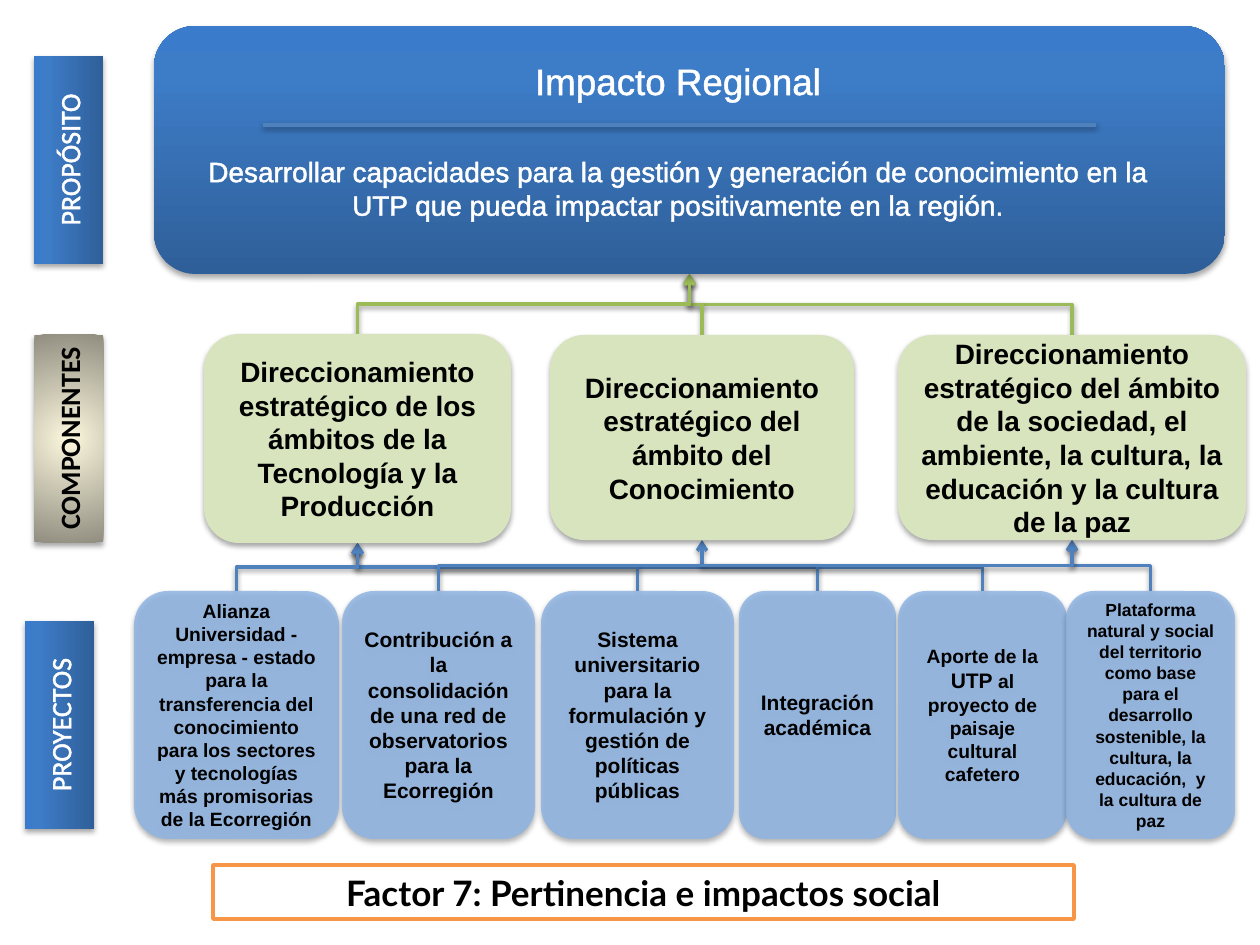
from pptx import Presentation
from pptx.dml.color import RGBColor
from pptx.enum.shapes import MSO_CONNECTOR as Link, MSO_SHAPE as Shape
from pptx.enum.text import MSO_ANCHOR as Anchor, MSO_AUTO_SIZE as AutoSize, PP_ALIGN as Align
from pptx.oxml import parse_xml
from pptx.oxml.ns import nsdecls, qn
from pptx.util import Emu, Pt

PX = 914400 / 126
COLORS = {
    "white": "FFFFFF", "black": "000000", "blue": "4F81BD", "green": "9BBB59",
    "orange": "F79646", "component": "D7E4BD", "project": "8EB4E3",
}
BLUE_STOPS = [(0, "2F5F99"), (80, "3D7CC7"), (100, "3A7CCB")]
SAND_STOPS = [(0, "FCF7DD"), (100, "918E81")]
UPWARD = '<a:lin ang="16200000" scaled="0"/>'
RADIAL = '<a:path path="circle"><a:fillToRect l="50000" t="50000" r="50000" b="50000"/></a:path>'

LABELS = [
    ("PROPÓSITO", -35, 125, BLUE_STOPS, UPWARD, {"color": "white", "outline": True}),
    ("COMPONENTES", -35, 404, SAND_STOPS, RADIAL, {"bold": True}),
    ("PROYECTOS", -44, 690, BLUE_STOPS, UPWARD, {"color": "white", "outline": True}),
]
COMPONENTS = [
    ("Direccionamiento estratégico de los ámbitos de la Tecnología y la Producción",
     (204, 334, 307, 209)),
    ("Direccionamiento estratégico del ámbito del Conocimiento", (550, 335, 304, 205)),
    ("Direccionamiento estratégico del ámbito de la sociedad, el ambiente, la cultura, "
     "la educación y la cultura de la paz", (898, 335, 348, 205)),
]
PROJECTS = [
    ([("Alianza Universidad - empresa - estado para la transferencia del conocimiento para "
       "los sectores y tecnologías más promisorias de la Ecorregión", 11)], 134, 205, 0),
    ([("Contribución a la consolidación de una red de observatorios para la Ecorregión", 12)],
     342, 193, 2),
    ([("Sistema universitario para la formulación y gestión de políticas públicas", 12)],
     541, 193, 0),
    ([("Integración académica", 12)], 739, 157, 1),
    ([("Aporte de la ", 11), ("UTP", 12), (" al proyecto de paisaje cultural cafetero", 11)],
     898, 169, 0),
    ([("Plataforma natural y social del territorio como base para el desarrollo sostenible, "
       "la cultura, la educación,  y la cultura de paz", 10)], 1066, 169, 2),
]


def px(*values):
    """Turn pixel lengths into a list of EMU lengths."""
    return [Emu(round(value * PX)) for value in values]


def rgb(name):
    """Return the named colour."""
    return RGBColor.from_string(COLORS[name])


def xml(tag, content="", attributes=""):
    """Build one DrawingML element."""
    return parse_xml(f'<a:{tag} {nsdecls("a")} {attributes}>{content}</a:{tag}>')


def shadow(distance, alpha):
    """Build a soft black shadow that falls downwards."""
    return xml("outerShdw", f'<a:srgbClr val="000000"><a:alpha val="{alpha * 1000}"/></a:srgbClr>',
               f'blurRad="40000" dist="{distance}" dir="5400000" rotWithShape="0"')


def add_span(para, text, size=16, font="Arial", color="black", bold=False, outline=False):
    """Add formatted text to a centred paragraph."""
    para.alignment = Align.CENTER
    span = para.add_run()
    span.text = text
    span.font.size, span.font.name, span.font.bold = Pt(size), font, bold
    span.font.color.rgb = rgb(color)
    if outline:
        line = f'<a:solidFill><a:srgbClr val="{COLORS[color]}"/></a:solidFill>'
        span.font.fill.solid()
        span.font.color.rgb = rgb(color)
        para.runs[-1].font._element.insert(0, xml("ln", line, 'w="18415"'))


def add_box(page, kind, area, shaded=True):
    """Add a shape without a line, with a shadow if wanted."""
    box = page.shapes.add_shape(kind, *px(*area))
    box.line.fill.background()
    box.shadow.inherit = False
    if shaded:
        box.element.spPr.find(qn("a:effectLst")).append(shadow(23000, 35))
    box.text_frame.word_wrap = True
    box.text_frame.vertical_anchor = Anchor.MIDDLE
    return box


def paint_solid(box, color, alpha=100):
    """Fill a box with one colour of the given opacity in percent."""
    box.fill.solid()
    box.fill.fore_color.rgb = rgb(color)
    if alpha < 100:
        tone = box.element.spPr.find(qn("a:solidFill"))[0]
        tone.append(xml("alpha", attributes=f'val="{alpha * 1000}"'))


def paint_gradient(box, stops, direction):
    """Fill a box with a gradient."""
    box.fill.background()
    marks = "".join(f'<a:gs pos="{place * 1000}"><a:srgbClr val="{tone}"/></a:gs>'
                    for place, tone in stops)
    properties = box.element.spPr
    properties.replace(properties.find(qn("a:noFill")), xml(
        "gradFill", f"<a:gsLst>{marks}</a:gsLst>{direction}", 'rotWithShape="1"'))


def add_label(page, text, left, top, stops, direction, style):
    """Add a row label that reads upwards."""
    box = add_box(page, Shape.RECTANGLE, (left, top, 208, 69))
    box.rotation = 270
    paint_gradient(box, stops, direction)
    add_span(box.text_frame.paragraphs[0], text, font="Calibri", **style)


def add_card(page, area, spans, color, alpha=100):
    """Add a rounded card with bold text."""
    box = add_box(page, Shape.ROUNDED_RECTANGLE, area)
    paint_solid(box, color, alpha)
    for text, size in spans:
        add_span(box.text_frame.paragraphs[0], text, size=size, bold=True)
    return box


def style_line(line, color):
    """Colour a connector and give it a shadow."""
    line.line.color.rgb = rgb(color)
    line.line.width = Pt(2)
    effects = xml("effectLst")
    effects.append(shadow(20000, 38))
    line.element.spPr.append(effects)


def join_up(page, child, parent, color):
    """Run an elbow arrow from the top of a child to the bottom of its parent."""
    arrow = page.shapes.add_connector(Link.ELBOW, 0, 0, 0, 0)
    arrow.begin_connect(child, 0)
    arrow.end_connect(parent, 2)
    start, end = child.left + child.width // 2, parent.left + parent.width // 2
    bottom, top = child.top, parent.top + parent.height
    arrow.width, arrow.height = Emu(bottom - top), Emu(abs(end - start))
    arrow.left = Emu((start + end - arrow.width) // 2)
    arrow.top = Emu((bottom + top - arrow.height) // 2)
    rightward = end > start
    frame = arrow.element.spPr.find(qn("a:xfrm"))
    frame.set("rot", "5400000" if rightward else "16200000")
    frame.set("flipH", "1" if rightward else "0")
    frame.set("flipV", "1")
    style_line(arrow, color)
    arrow.element.spPr.find(qn("a:ln")).append(xml("tailEnd", attributes='type="arrow"'))
    page.shapes.element.insert(2, arrow.element)


def add_purpose(page):
    """Add the purpose panel with its title, rule and statement."""
    panel = add_box(page, Shape.ROUNDED_RECTANGLE, (154, 26, 1071, 248))
    paint_gradient(panel, BLUE_STOPS, UPWARD)
    title = page.shapes.title
    title.left, title.top, title.width, title.height = px(194, 52, 968, 50)
    statement = page.shapes.add_textbox(*px(194, 148, 968, 83))
    for box, text, size in (
        (title, "Impacto Regional", 21),
        (statement, "Desarrollar capacidades para la gestión y generación de conocimiento en la "
                    "UTP que pueda impactar positivamente en la región.", 16),
    ):
        frame = box.text_frame
        frame.word_wrap, frame.auto_size = True, AutoSize.NONE
        frame.vertical_anchor = Anchor.TOP
        add_span(frame.paragraphs[0], text, size=size, color="white", outline=True)
    panel.element.addnext(title.element)
    style_line(page.shapes.add_connector(Link.STRAIGHT, *px(263, 125, 1096, 125)), "blue")
    return panel


def add_footer(page):
    """Add the framed factor name at the foot."""
    box = add_box(page, Shape.RECTANGLE, (213, 865, 861, 54), shaded=False)
    paint_solid(box, "white")
    box.line.color.rgb = rgb("orange")
    box.line.width = Pt(2)
    add_span(box.text_frame.paragraphs[0], "Factor 7: Pertinencia e impactos social",
             size=20, font="Lato", bold=True)


def main():
    """Build the slide and save it."""
    deck = Presentation()
    deck.slide_width, deck.slide_height = px(1260, 945)
    page = deck.slides.add_slide(deck.slide_layouts[5])
    panel = add_purpose(page)
    for label in LABELS:
        add_label(page, *label)
    components = [add_card(page, area, [(text, 16)], "component") for text, area in COMPONENTS]
    for component in components:
        join_up(page, component, panel, "green")
    for spans, left, width, parent in PROJECTS:
        project = add_card(page, (left, 591, width, 248), spans, "project", alpha=84)
        join_up(page, project, components[parent], "blue")
    add_footer(page)
    deck.save("out.pptx")


if __name__ == "__main__":
    main()
